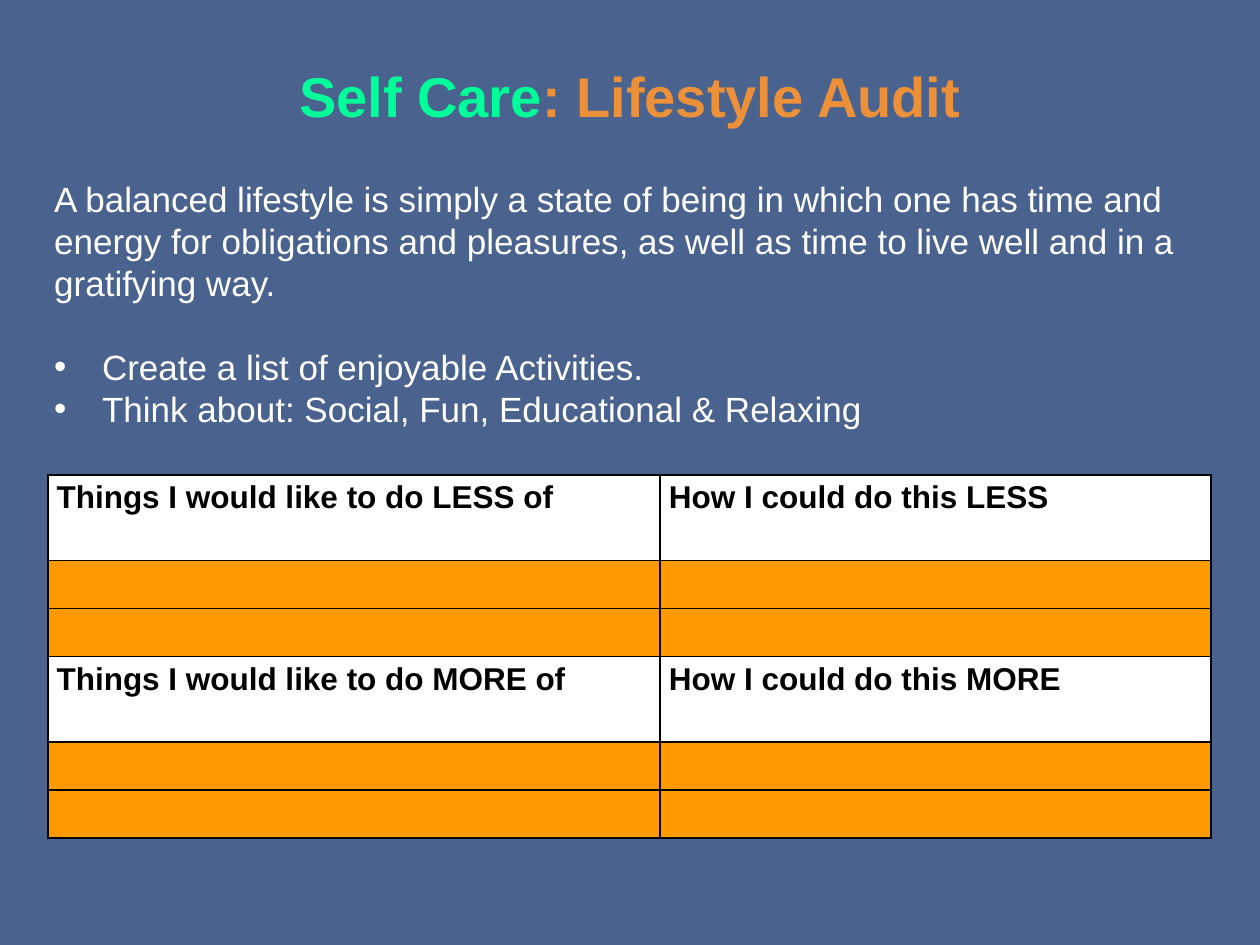
from lxml.etree import SubElement
from pptx import Presentation
from pptx.dml.color import RGBColor
from pptx.enum.text import MSO_ANCHOR, MSO_AUTO_SIZE, PP_ALIGN
from pptx.oxml.ns import qn
from pptx.util import Inches, Pt

BLUE = RGBColor(0x49, 0x62, 0x8E)
GREEN = RGBColor(0x00, 0xFF, 0x99)
AMBER = RGBColor(0xEC, 0x90, 0x39)
ORANGE = RGBColor(0xFF, 0x99, 0x00)
WHITE = RGBColor(0xFF, 0xFF, 0xFF)
BLACK = RGBColor(0x00, 0x00, 0x00)

WIDTH, HEIGHT = 10, 7.5
INSET_X, INSET_Y = Inches(0.07), Inches(0.04)
INDENT = Inches(0.38)
LINE_HEIGHT = Pt(24)
HEADER_ROW, ENTRY_ROW = 0.68, 0.38

INTRO = ("A balanced lifestyle is simply a state of being in which one has time and "
         "energy for obligations and pleasures, as well as time to live well and in a "
         "gratifying way.")
STEPS = ["Create a list of enjoyable Activities.",
         "Think about: Social, Fun, Educational & Relaxing"]
AUDIT = [("Things I would like to do LESS of", "How I could do this LESS"),
         ("", ""), ("", ""),
         ("Things I would like to do MORE of", "How I could do this MORE"),
         ("", ""), ("", "")]


class SlideBuilder:
    """Holds the style and the current slide; lengths are shares of the slide."""

    font_name = "Arial"

    def __init__(self, presentation):
        self.presentation = presentation
        self.slide = presentation.slides.add_slide(presentation.slide_layouts[5])
        fill = self.slide.background.fill
        fill.solid()
        fill.fore_color.rgb = BLUE

    def area(self, left, top, width, height):
        slide_width = self.presentation.slide_width
        slide_height = self.presentation.slide_height
        return (round(left * slide_width), round(top * slide_height),
                round(width * slide_width), round(height * slide_height))

    def style(self, font, size, color=None, bold=False):
        font.name, font.size, font.bold = self.font_name, Pt(size), bold
        if color is not None:
            font.color.rgb = color

    def title(self, area, parts):
        shape = self.slide.shapes.title
        shape.left, shape.top, shape.width, shape.height = self.area(*area)
        shape.text_frame.vertical_anchor = MSO_ANCHOR.MIDDLE
        paragraph = shape.text_frame.paragraphs[0]
        paragraph.alignment = PP_ALIGN.CENTER
        self.style(paragraph.font, 32, bold=True)
        for text, color in parts:
            run = paragraph.add_run()
            run.text = text
            self.style(run.font, 32, color, bold=True)

    def body(self, area, intro, bullets):
        frame = self.slide.shapes.add_textbox(*self.area(*area)).text_frame
        frame.word_wrap = True
        frame.auto_size = MSO_AUTO_SIZE.SHAPE_TO_FIT_TEXT
        frame.margin_left = frame.margin_right = INSET_X
        frame.margin_top = frame.margin_bottom = INSET_Y
        frame.text = intro
        self.style(frame.paragraphs[0].font, 20, WHITE)
        for index, text in enumerate(bullets):
            paragraph = frame.add_paragraph()
            paragraph.text = text
            if index == 0:
                paragraph.space_before = LINE_HEIGHT
            self.bullet(paragraph)
            self.style(paragraph.font, 20, WHITE)

    def bullet(self, paragraph):
        properties = paragraph._p.get_or_add_pPr()
        properties.set("marL", str(INDENT))
        properties.set("indent", str(-INDENT))
        SubElement(properties, qn("a:buFont")).set("typeface", self.font_name)
        SubElement(properties, qn("a:buChar")).set("char", "•")

    def table(self, area, column_shares, row_shares, rows):
        shape = self.slide.shapes.add_table(len(rows), len(column_shares), *self.area(*area))
        table = shape.table
        table.first_row = table.horz_banding = False
        for column, share in zip(table.columns, column_shares):
            column.width = round(share * self.presentation.slide_width)
        for row, share, texts in zip(table.rows, row_shares, rows):
            row.height = round(share * self.presentation.slide_height)
            for cell, text in zip(row.cells, texts):
                self.cell(cell, text)

    def cell(self, cell, text):
        cell.margin_left = cell.margin_right = INSET_X
        cell.margin_top = cell.margin_bottom = INSET_Y
        cell.text = text
        self.style(cell.text_frame.paragraphs[0].font, 18, BLACK, bold=True)
        # Borders come before the fill in the cell properties
        properties = cell._tc.get_or_add_tcPr()
        for side in ("lnL", "lnR", "lnT", "lnB"):
            line = SubElement(properties, qn(f"a:{side}"), w=str(Pt(1)))
            solid = SubElement(line, qn("a:solidFill"))
            SubElement(solid, qn("a:srgbClr")).set("val", str(BLACK))
        cell.fill.solid()
        cell.fill.fore_color.rgb = WHITE if text else ORANGE


def main():
    presentation = Presentation()
    presentation.slide_width = Inches(WIDTH)
    presentation.slide_height = Inches(HEIGHT)
    builder = SlideBuilder(presentation)

    # Heading
    builder.title((0.045, 0.33 / HEIGHT, 0.91, 0.85 / HEIGHT),
                  [("Self Care", GREEN), (": Lifestyle Audit", AMBER)])

    # Audit table: a header row above two entry rows, twice
    row_heights = [HEADER_ROW if row[0] else ENTRY_ROW for row in AUDIT]
    builder.table((0.038, 3.77 / HEIGHT, 0.922, sum(row_heights) / HEIGHT),
                  [0.486, 0.437], [height / HEIGHT for height in row_heights], AUDIT)

    # Introduction and steps
    builder.body((0.036, 1.37 / HEIGHT, 0.922, 0.32), INTRO, STEPS)

    presentation.save("out.pptx")


if __name__ == "__main__":
    main()
